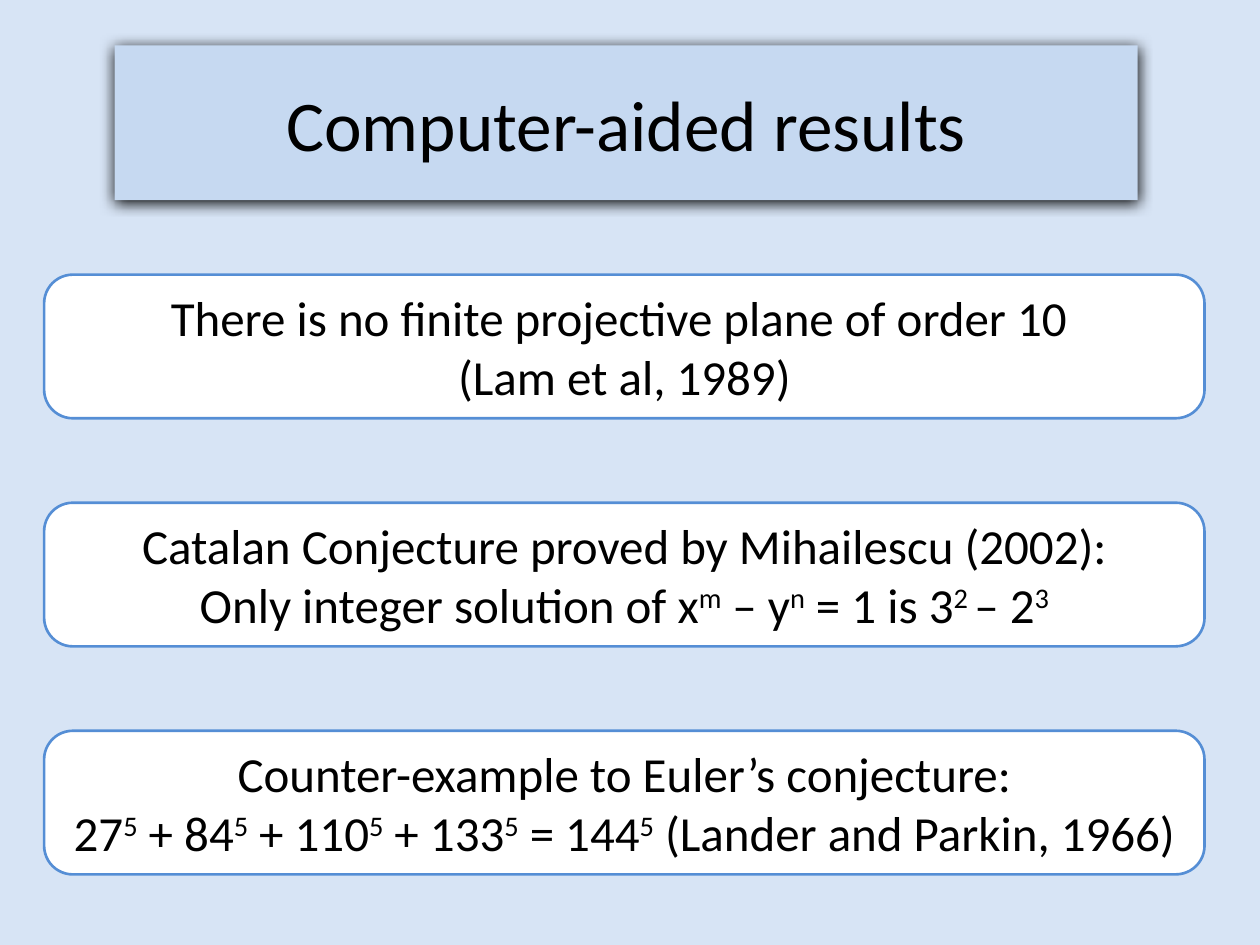
from dataclasses import dataclass

from lxml.etree import SubElement
from pptx import Presentation
from pptx.dml.color import RGBColor
from pptx.enum.shapes import MSO_SHAPE as Shape
from pptx.enum.text import MSO_ANCHOR as Anchor, PP_ALIGN as Align
from pptx.oxml.ns import qn
from pptx.util import Inches, Pt


@dataclass(frozen=True)
class Theme:
    font: str = "Calibri"
    title_size: float = 40.7
    body_size: float = 28
    text: str = "000000"
    background: str = "D7E4F5"
    banner: str = "C6D9F1"
    card: str = "FFFFFF"
    border: str = "558ED5"
    shadow: str = "000000"


THEME = Theme()

# Text between a pair of ^ marks is superscript
RESULTS = [
    ["There is no finite projective plane of order 10 ", "(Lam et al, 1989)"],
    ["Catalan Conjecture proved by Mihailescu (2002):",
     "Only integer solution of x^m^ – y^n^ = 1 is 3^2 ^– 2^3^"],
    ["Counter-example to Euler’s conjecture:",
     "27^5^ + 84^5^ + 110^5^ + 133^5^ = 144^5^ (Lander and Parkin, 1966)"],
]


def write_text(frame, lines, size, color=THEME.text, align=Align.CENTER):
    frame.word_wrap = True
    frame.vertical_anchor = Anchor.MIDDLE
    for index, line in enumerate(lines):
        paragraph = frame.add_paragraph() if index else frame.paragraphs[0]
        paragraph.alignment = align
        for position, part in enumerate(line.split("^")):
            if not part:
                continue
            run = paragraph.add_run()
            run.text = part
            run.font.name = THEME.font
            run.font.size = Pt(size)
            run.font.color.rgb = RGBColor.from_string(color)
            if position % 2:
                run.font._element.set("baseline", "30000")


def add_panel(slide, kind, box, fill):
    panel = slide.shapes.add_shape(kind, *(Inches(length) for length in box))
    panel.shadow.inherit = False
    panel.fill.solid()
    panel.fill.fore_color.rgb = RGBColor.from_string(fill)
    panel.line.fill.background()
    return panel


def add_drop_shadow(panel, blur, distance, angle):
    effects = panel._element.spPr.find(qn("a:effectLst"))
    shadow = SubElement(effects, qn("a:outerShdw"), blurRad=str(Pt(blur)),
                        dist=str(Pt(distance)), dir=str(angle * 60000),
                        algn="ctr", rotWithShape="0")
    SubElement(shadow, qn("a:srgbClr"), val=THEME.shadow)


def add_title(slide, box, title):
    banner = add_panel(slide, Shape.RECTANGLE, box, THEME.banner)
    add_drop_shadow(banner, blur=8.5, distance=1, angle=90)
    write_text(banner.text_frame, [title], THEME.title_size)


def add_results(slide, box, results, gap=0.67):
    left, top, width, height = box
    card_height = (height - gap * (len(results) - 1)) / len(results)
    for index, lines in enumerate(results):
        card_top = top + index * (card_height + gap)
        card = add_panel(slide, Shape.ROUNDED_RECTANGLE,
                         (left, card_top, width, card_height), THEME.card)
        card.adjustments[0] = 0.2
        card.line.color.rgb = RGBColor.from_string(THEME.border)
        card.line.width = Pt(1.5)
        write_text(card.text_frame, lines, THEME.body_size)


def main():
    deck = Presentation()
    deck.slide_width, deck.slide_height = Inches(10), Inches(7.5)
    slide = deck.slides.add_slide(deck.slide_layouts[6])

    # Background
    background = slide.background.fill
    background.solid()
    background.fore_color.rgb = RGBColor.from_string(THEME.background)

    # Title banner, then the stack of result cards
    add_title(slide, (0.91, 0.36, 8.12, 1.23), "Computer-aided results")
    add_results(slide, (0.35, 2.18, 9.21, 4.76), RESULTS)

    deck.save("out.pptx")


if __name__ == "__main__":
    main()
